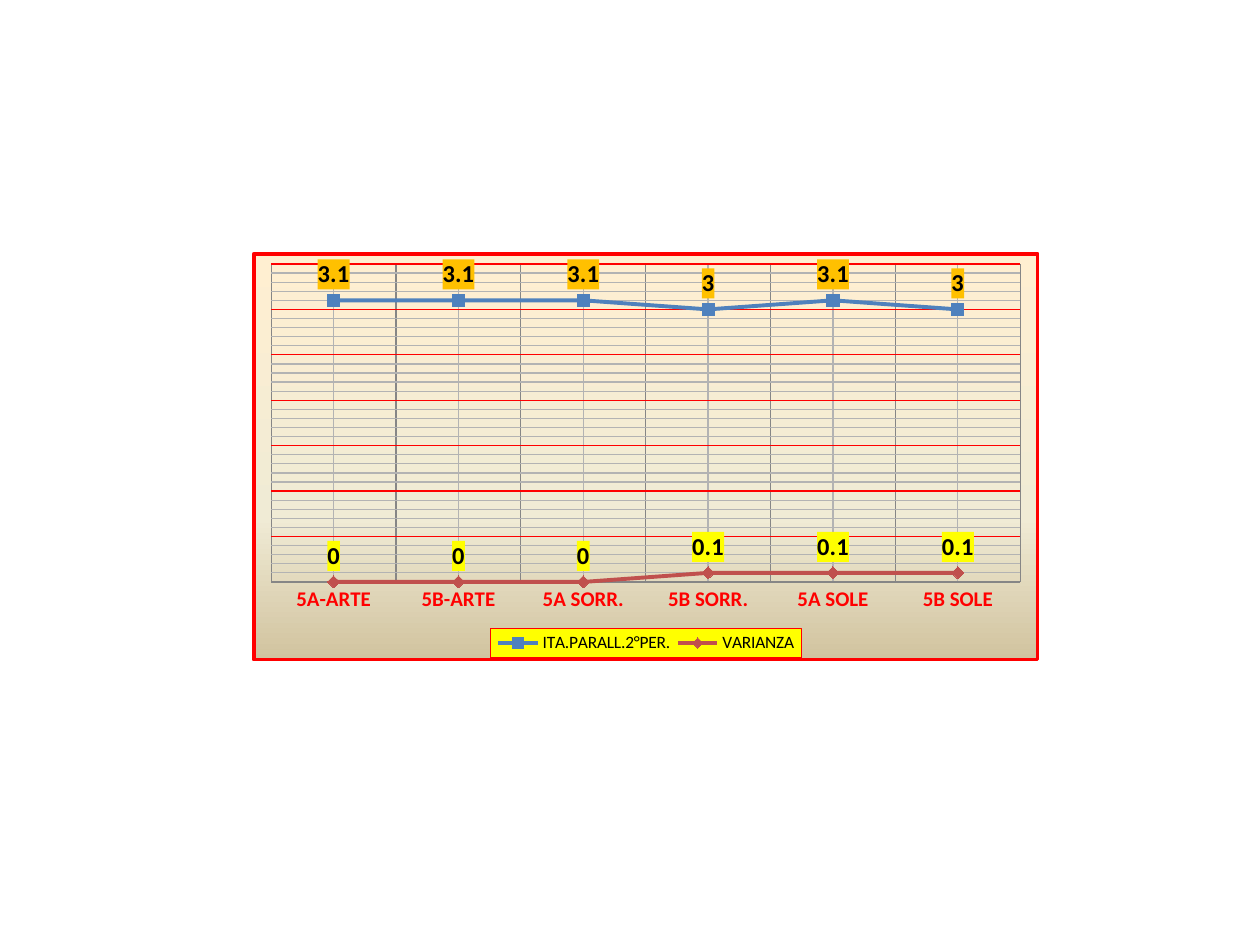
from dataclasses import dataclass

from lxml import etree
from pptx import Presentation
from pptx.chart.data import CategoryChartData
from pptx.dml.color import RGBColor
from pptx.enum import chart as ch
from pptx.oxml import parse_xml
from pptx.oxml.ns import nsdecls, qn
from pptx.util import Inches, Pt


@dataclass(frozen=True)
class Theme:
    face: str = "Calibri"
    black: str = "000000"
    red: str = "FF0000"
    yellow: str = "FFFF00"
    amber: str = "FFC000"
    major: str = "868686"
    minor: str = "B3B3B3"
    small: int = 10
    mid: int = 12
    large: int = 14
    stops: tuple = ((0, "FFEFD1"), (65, "F0EBD5"), (100, "D1C39F"))


T = Theme()
CATS = ["5A-ARTE", "5B-ARTE", "5A SORR.", "5B SORR.", "5A SOLE", "5B SOLE"]
MARK = ch.XL_MARKER_STYLE
ROWS = [
    ("ITA.PARALL.2°PER.", (3.1, 3.1, 3.1, 3, 3.1, 3), "4F81BD", T.amber, MARK.SQUARE),
    ("VARIANZA", (0, 0, 0, 0.1, 0.1, 0.1), "C0504D", T.yellow, MARK.DIAMOND),
]


def assign(item, values):
    for name, value in values.items():
        setattr(item, name, value)


def style(font, size, color=T.black, bold=False):
    assign(font, dict(name=T.face, size=Pt(size), bold=bold))
    font.color.rgb = RGBColor.from_string(color)


def stroke(line, color, width):
    line.color.rgb = RGBColor.from_string(color)
    line.width = Pt(width)


def solid(color):
    return f'<a:solidFill><a:srgbClr val="{color}"/></a:solidFill>'


def blend(stops):
    """Gradient from top to bottom."""
    marks = "".join(f'<a:gs pos="{at * 1000}"><a:srgbClr val="{color}"/></a:gs>'
                    for at, color in stops)
    return f'<a:gradFill><a:gsLst>{marks}</a:gsLst><a:lin ang="5400000" scaled="0"/></a:gradFill>'


def props(fill="", color=None, width=1):
    """Shape properties of a chart part: its fill and outline."""
    line = f'<a:ln w="{Pt(width)}">{solid(color)}</a:ln>' if color else ""
    return parse_xml(f'<c:spPr {nsdecls("c", "a")}>{fill}{line}</c:spPr>')


def paint(node, *look):
    """Fill and outline a chart part whose font is already set."""
    node.find(qn("c:txPr")).addprevious(props(*look))


def place(node, before, box, inner=False):
    """Set a part's left, top, width and height as shares of the chart."""
    for old in node.findall(qn("c:layout")):
        node.remove(old)
    target = '<c:layoutTarget val="inner"/>' if inner else ""
    modes = '<c:xMode val="edge"/><c:yMode val="edge"/>'
    sides = "".join(f'<c:{key} val="{val}"/>' for key, val in zip("xywh", box))
    node.find(qn(before)).addprevious(etree.fromstring(
        f'<c:layout {nsdecls("c")}><c:manualLayout>{target}{modes}{sides}'
        '</c:manualLayout></c:layout>'))


def draw_axes(chart):
    cat, val = chart.category_axis, chart.value_axis
    none = ch.XL_TICK_MARK.NONE
    assign(cat, dict(major_tick_mark=none, minor_tick_mark=none))
    style(cat.tick_labels.font, T.mid, T.red, True)
    stroke(cat.format.line, T.major, 0.75)
    assign(val, dict(minimum_scale=0, maximum_scale=3.5, major_unit=0.5,
                     minor_unit=0.1, visible=False))
    for axis, color in ((cat, T.major), (val, T.red)):
        assign(axis, dict(has_major_gridlines=True, has_minor_gridlines=True))
        stroke(axis.major_gridlines.format.line, color, 0.75)
        minor = axis._element.find(qn("c:minorGridlines"))
        minor.append(props("", T.minor, 0.75))


def draw_series(line, color, tint, mark):
    line.smooth = False
    stroke(line.format.line, color, 2.25)
    assign(line.marker, dict(style=mark, size=7))
    line.marker.format.fill.solid()
    line.marker.format.fill.fore_color.rgb = RGBColor.from_string(color)
    stroke(line.marker.format.line, color, 0.75)
    labels = line.data_labels
    assign(labels, dict(show_value=True, position=ch.XL_LABEL_POSITION.ABOVE))
    style(labels.font, T.large, bold=True)
    paint(labels._element, solid(tint))


def draw_legend(chart):
    chart.has_legend = True
    legend = chart.legend
    assign(legend, dict(position=ch.XL_LEGEND_POSITION.BOTTOM, include_in_layout=False))
    style(legend.font, T.small)
    paint(legend._element, solid(T.yellow), T.red, 0.75)
    place(legend._element, "c:overlay", (0.302, 0.923, 0.397, 0.073))


def draw_chart(slide):
    data = CategoryChartData()
    data.categories = CATS
    for name, vals, *_ in ROWS:
        data.add_series(name, vals)
    chart = slide.shapes.add_chart(
        ch.XL_CHART_TYPE.LINE_MARKERS, Inches(2), Inches(2),
        Inches(6.25), Inches(3.25), data).chart
    chart.has_title = False
    style(chart.font, T.small)
    paint(chart._chartSpace, blend(T.stops), T.red, 2.25)
    draw_axes(chart)
    chart.plots[0].vary_by_categories = False
    for line, (_, _, *look) in zip(chart.plots[0].series, ROWS):
        draw_series(line, *look)
    draw_legend(chart)
    area = chart._chartSpace.chart.plotArea
    place(area, "c:lineChart", (0.022, 0.025, 0.956, 0.784), inner=True)


def main():
    deck = Presentation()
    assign(deck, dict(slide_width=Inches(10), slide_height=Inches(7.5)))
    draw_chart(deck.slides.add_slide(deck.slide_layouts[6]))
    deck.save("out.pptx")


if __name__ == "__main__":
    main()
